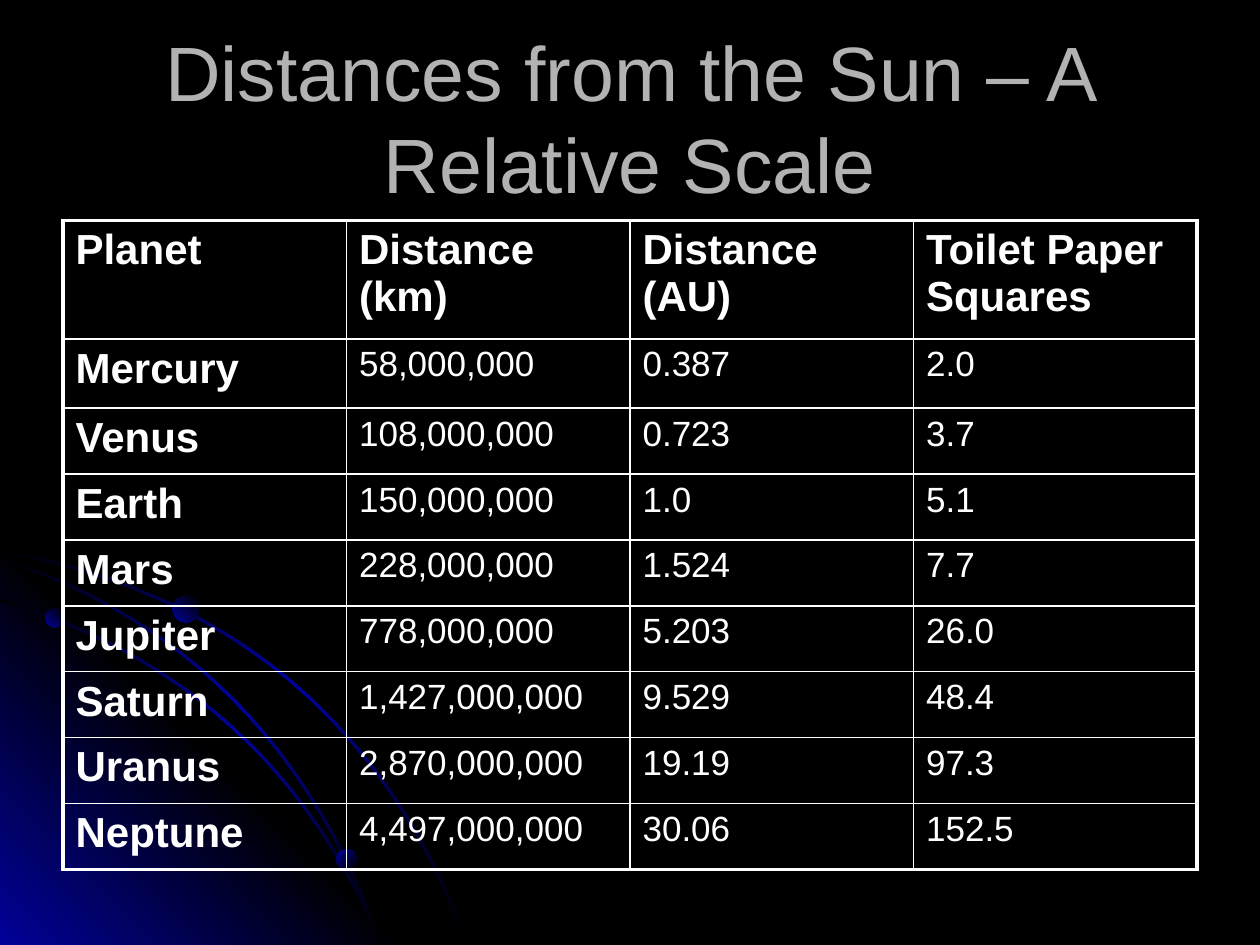
from math import cos, pi, sin
from lxml.etree import SubElement
from pptx import Presentation
from pptx.dml.color import RGBColor
from pptx.enum.shapes import MSO_SHAPE as Shape
from pptx.enum.text import MSO_ANCHOR as Anchor, MSO_AUTO_SIZE as AutoSize, PP_ALIGN as Align
from pptx.oxml import parse_xml
from pptx.oxml.ns import nsdecls, qn
from pptx.util import Inches, Pt

COLORS = {"black": "000000", "blue": "010199", "title": "B2B2B2", "white": "FFFFFF"}
FONT = "Arial"
DOWN_RIGHT, UP_RIGHT = 45, 315  # gradient directions, clockwise degrees

deck = Presentation()
deck.slide_width, deck.slide_height = Inches(10), Inches(7.5)
width, height = deck.slide_width, deck.slide_height
margin, content_width = int(width * 0.05), int(width * 0.9)
page = deck.slides.add_slide(deck.slide_layouts[5])
page.background.fill.solid()
page.background.fill.fore_color.rgb = RGBColor.from_string(COLORS["black"])


def shade(shape, names, angle):
    """Fill with evenly spaced gradient stops, without outline or shadow."""
    step = 100000 // (len(names) - 1)
    stops = "".join(f'<a:gs pos="{i * step}"><a:srgbClr val="{COLORS[name]}"/></a:gs>'
                    for i, name in enumerate(names))
    shape.line.fill.background()
    shape.shadow.inherit = False
    shape.element.spPr.find(qn("a:ln")).addprevious(parse_xml(
        f'<a:gradFill {nsdecls("a")} rotWithShape="1"><a:gsLst>{stops}</a:gsLst>'
        f'<a:lin ang="{angle * 60000}" scaled="0"/></a:gradFill>'))


def style(para, size, color, bold=False):
    para.font.name, para.font.size, para.font.bold = FONT, Pt(size), bold
    para.font.color.rgb = RGBColor.from_string(COLORS[color])


# Orbits: start, middle and end of each arc, in inches
orbits = {
    "outer": ((0, 4.37), (2.3, 5.4), (3.71, 7.49)),
    "inner": ((0, 4.76), (1.84, 5.77), (3.02, 7.49)),
    "middle": ((0, 4.43), (1.86, 5.56), (3.02, 7.49)),
}
STEPS, HALF_BAND = 24, 0.01

outlines = []
for (x0, y0), (xm, ym), (x1, y1) in orbits.values():
    # Control point of the quadratic curve through the middle point
    xc, yc = 2 * xm - (x0 + x1) / 2, 2 * ym - (y0 + y1) / 2
    upper, lower = [], []
    for i in range(STEPS + 1):
        t = i / STEPS
        x = (1 - t) ** 2 * x0 + 2 * t * (1 - t) * xc + t ** 2 * x1
        y = (1 - t) ** 2 * y0 + 2 * t * (1 - t) * yc + t ** 2 * y1
        # The band's offset turns from upward to rightward along the arc
        dx, dy = HALF_BAND * sin(t * pi / 2), HALF_BAND * cos(t * pi / 2)
        upper.append((x + dx, y - dy))
        lower.append((x - dx, y + dy))
    outlines.append((upper + lower[::-1], ("black", "blue", "black"), DOWN_RIGHT))

# Corner glow, behind the inner and middle orbits
glow = [(3.22, 7.5), (0, 7.5), (0, 4.27)]
outlines.insert(1, (glow, ("blue", "black", "blue"), UP_RIGHT))

# Freeforms keep whole units only, so count in thousandths of an inch
for outline, names, angle in outlines:
    points = [(round(x * 1000), round(y * 1000)) for x, y in outline]
    builder = page.shapes.build_freeform(*points[0], scale=Inches(1) / 1000)
    builder.add_line_segments(points[1:], close=True)
    shade(builder.convert_to_shape(), names, angle)

# Planets on the orbits: left, top, diameter, gradient direction
for left, top, diameter, angle in [(0.36, 4.83, 0.15, UP_RIGHT),
                                   (2.67, 6.74, 0.16, DOWN_RIGHT),
                                   (1.37, 4.73, 0.21, UP_RIGHT)]:
    planet = page.shapes.add_shape(
        Shape.OVAL, Inches(left), Inches(top), Inches(diameter), Inches(diameter))
    shade(planet, ("blue", "black"), angle)

# Title, brought in front of the orbits
title = page.shapes.title
title.left, title.top = margin, int(height * 0.04)
title.width, title.height = content_width, height // 6
frame = title.text_frame
frame.text = "Distances from the Sun – A Relative Scale"
frame.word_wrap, frame.auto_size = True, AutoSize.NONE
frame.vertical_anchor = Anchor.MIDDLE
frame.paragraphs[0].alignment = Align.CENTER
style(frame.paragraphs[0], 44, "title")
page.shapes._spTree.append(title.element)

# Distance table
rows = [
    ("Planet", "Distance (km)", "Distance (AU)", "Toilet Paper Squares"),
    ("Mercury", "58,000,000", "0.387", "2.0"),
    ("Venus", "108,000,000", "0.723", "3.7"),
    ("Earth", "150,000,000", "1.0", "5.1"),
    ("Mars", "228,000,000", "1.524", "7.7"),
    ("Jupiter", "778,000,000", "5.203", "26.0"),
    ("Saturn", "1,427,000,000", "9.529", "48.4"),
    ("Uranus", "2,870,000,000", "19.19", "97.3"),
    ("Neptune", "4,497,000,000", "30.06", "152.5"),
]
last_row, last_column = len(rows) - 1, len(rows[0]) - 1
table_height, first_heights = 5.15, [0.94, 0.55]
other_rows = len(rows) - len(first_heights)
other_height = (table_height - sum(first_heights)) / other_rows
row_heights = first_heights + [other_height] * other_rows
THICK, THIN = Pt(2.25), Pt(1)

table = page.shapes.add_table(len(rows), len(rows[0]), margin, height * 7 // 30,
                              content_width, Inches(table_height)).table
table.first_row = table.horz_banding = False

for r, values in enumerate(rows):
    table.rows[r].height = Inches(row_heights[r])
    for c, value in enumerate(values):
        cell = table.cell(r, c)
        cell.text = value
        cell.fill.background()
        heading = r == 0 or c == 0
        para = cell.text_frame.paragraphs[0]
        style(para, 24 if heading else 20, "white", heading)
        para._p.get_or_add_pPr().insert(0, parse_xml(
            f'<a:spcBef {nsdecls("a")}><a:spcPct val="20000"/></a:spcBef>'))

        # Thick frame outside, thin rules inside; borders precede the fill
        on_frame = {"L": c == 0, "R": c == last_column, "T": r == 0, "B": r == last_row}
        properties = cell._tc.get_or_add_tcPr()
        for position, (side, framed) in enumerate(on_frame.items()):
            border = SubElement(properties, qn(f"a:ln{side}"), w=str(THICK if framed else THIN))
            paint = SubElement(border, qn("a:solidFill"))
            SubElement(paint, qn("a:srgbClr"), val=COLORS["white"])
            properties.insert(position, border)

deck.save("out.pptx")
